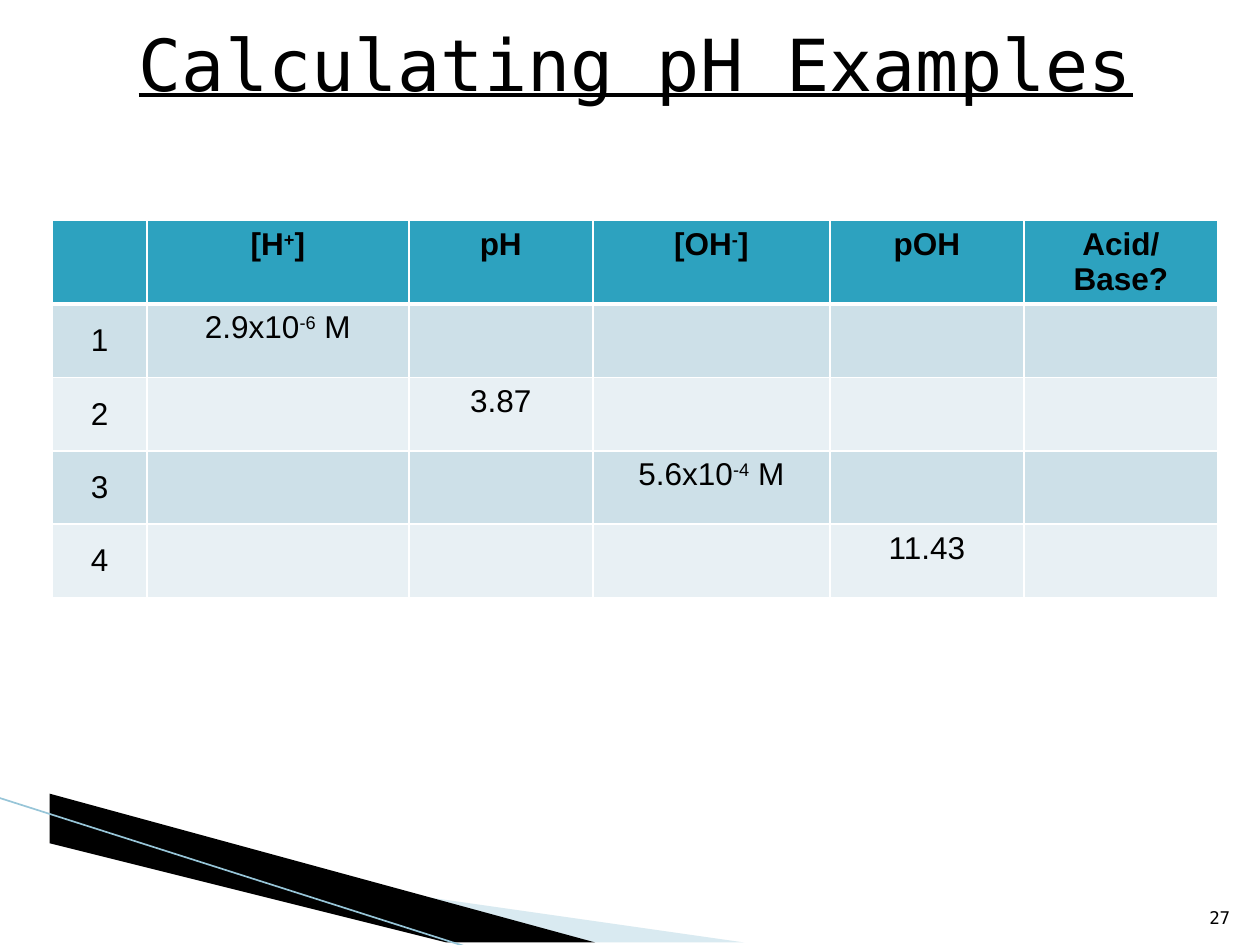
from lxml import etree
from pptx import Presentation
from pptx.dml.color import RGBColor
from pptx.enum import shapes, text
from pptx.oxml.ns import qn
from pptx.util import Cm, Pt

TITLE = "Calculating pH Examples"
PAGE_NUMBER = "27"
# Each cell is a tuple of runs; a run starting with ^ is superscript.
ROWS = [
    [(), ("[H", "^+", "]"), ("pH",), ("[OH", "^-", "]"), ("pOH",), ("Acid/Base?",)],
    [("1",), ("2.9x10", "^-6", " M"), (), (), (), ()],
    [("2",), (), ("3.87",), (), (), ()],
    [("3",), (), (), ("5.6x10", "^-4", " M"), (), ()],
    [("4",), (), (), (), ("11.43",), ()],
]
COLUMN_WIDTHS = [1.9, 5.28, 3.71, 4.78, 3.91, 3.91]
ROW_HEIGHT = 1.48
COLORS = {
    "ink": "000000", "border": "FFFFFF", "header": "2DA2BF",
    "odd": "CDE0E8", "even": "E8F0F4",
    "pale wedge": "A0CBDC", "dark wedge": "000000", "edge": "97C5D8",
}
WEDGES = [
    ("pale wedge", 40, [(1.4, 16.54), (15.11, 19.08), (11.58, 19.08), (1.4, 16.51)]),
    ("dark wedge", 100, [(1.35, 16.48), (11.61, 19.08), (9.45, 19.1), (1.37, 16.51)]),
]
EDGE = [(-0.03, 16.08), (9.45, 19.1)]
MONO, SANS = "DejaVu Sans Mono", "Arial"


def color(name):
    return RGBColor.from_string(COLORS[name])


def add_runs(paragraph, runs, font_name, size, align, bold=False, underline=False):
    paragraph.alignment = align
    for content in runs:
        run = paragraph.add_run()
        run.text = content.removeprefix("^")
        run.font.name, run.font.size = font_name, Pt(size)
        run.font.bold, run.font.underline = bold, underline
        run.font.color.rgb = color("ink")
        if content.startswith("^"):
            run._r.get_or_add_rPr().set("baseline", "30000")


def add_label(slide, box, content, size, align, anchor, underline=False):
    frame = slide.shapes.add_textbox(*map(Cm, box)).text_frame
    frame.word_wrap = True
    frame.vertical_anchor = anchor
    add_runs(frame.paragraphs[0], [content], MONO, size, align, underline=underline)


def set_borders(cell, widths):
    properties = cell._tc.get_or_add_tcPr()
    for side, width in widths.items():
        line = etree.SubElement(properties, qn(f"a:ln{side}"), w=str(Pt(width)))
        fill = etree.SubElement(line, qn("a:solidFill"))
        etree.SubElement(fill, qn("a:srgbClr"), val=COLORS["border"])


def add_wedge(slide, color_name, opacity, points):
    builder = slide.shapes.build_freeform(*points[0], scale=Cm(1))
    builder.add_line_segments(points[1:], close=True)
    wedge = builder.convert_to_shape()
    wedge.shadow.inherit = False
    wedge.line.fill.background()
    wedge.fill.solid()
    wedge.fill.fore_color.rgb = color(color_name)
    if opacity < 100:
        tint = wedge._element.spPr.find(".//" + qn("a:srgbClr"))
        etree.SubElement(tint, qn("a:alpha"), val=str(opacity * 1000))


def add_edge(slide):
    edge = slide.shapes.add_connector(
        shapes.MSO_CONNECTOR.STRAIGHT, *(Cm(v) for point in EDGE for v in point))
    edge.line.color.rgb = color("edge")
    edge.line.width = Pt(0.95)
    etree.SubElement(edge._element.spPr, qn("a:effectLst"))


def add_ph_table(slide):
    table = slide.shapes.add_table(
        len(ROWS), len(COLUMN_WIDTHS), Cm(1.06), Cm(4.45),
        Cm(sum(COLUMN_WIDTHS)), Cm(ROW_HEIGHT * len(ROWS))).table
    for column, width in zip(table.columns, COLUMN_WIDTHS):
        column.width = Cm(width)
    for r, row in enumerate(ROWS):
        table.rows[r].height = Cm(ROW_HEIGHT)
        band = "header" if r == 0 else "odd" if r % 2 else "even"
        for c, runs in enumerate(row):
            cell = table.cell(r, c)
            set_borders(cell, {"L": 1, "R": 1, "T": 3 if r == 1 else 1,
                               "B": 3 if r == 0 else 1})
            cell.fill.solid()
            cell.fill.fore_color.rgb = color(band)
            if r and c == 0:
                cell.vertical_anchor = text.MSO_ANCHOR.MIDDLE
            add_runs(cell.text_frame.paragraphs[0], runs, SANS, 18,
                     text.PP_ALIGN.CENTER, bold=r == 0)


def main():
    deck = Presentation()
    deck.slide_width, deck.slide_height = Cm(25.4), Cm(19.05)
    slide = deck.slides.add_slide(deck.slide_layouts[6])
    for wedge in WEDGES:
        add_wedge(slide, *wedge)
    add_edge(slide)
    add_ph_table(slide)
    add_label(slide, (24.03, 17.81, 1.02, 1.02), PAGE_NUMBER, 10,
              text.PP_ALIGN.RIGHT, text.MSO_ANCHOR.BOTTOM)
    add_label(slide, (2.34, 0, 20.96, 2.54), TITLE, 41,
              text.PP_ALIGN.CENTER, text.MSO_ANCHOR.MIDDLE, underline=True)
    deck.save("out.pptx")


if __name__ == "__main__":
    main()
